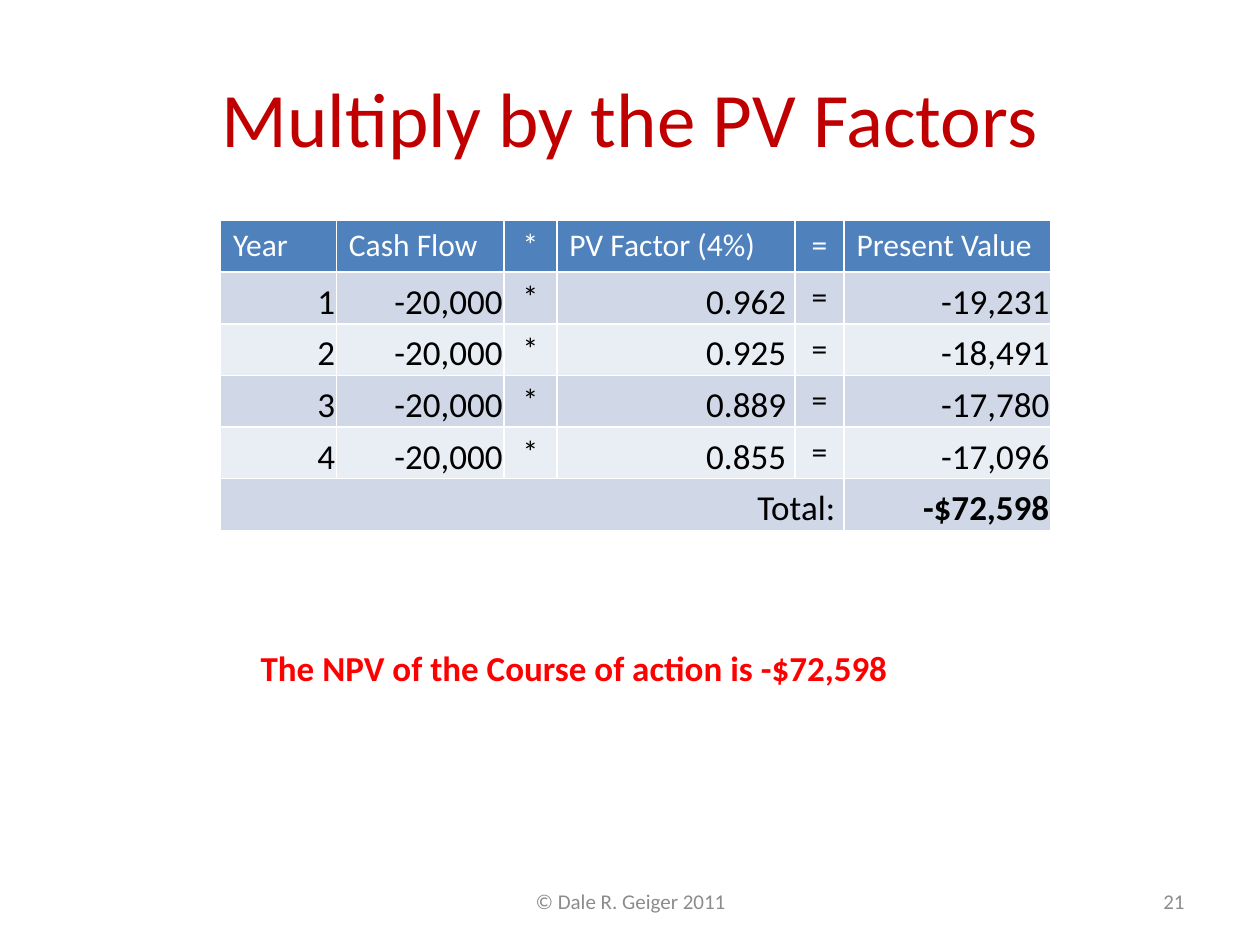
from dataclasses import dataclass

from pptx import Presentation
from pptx.dml.color import RGBColor
from pptx.enum import text as t
from pptx.util import Inches, Pt

FONT = "Calibri"
HEADER_FILL, DARK_BAND, LIGHT_BAND = "4F81BD", "D0D8E8", "E9EDF4"
LEFT, CENTER, RIGHT = t.PP_ALIGN.LEFT, t.PP_ALIGN.CENTER, t.PP_ALIGN.RIGHT
TOP, MIDDLE, BOTTOM = t.MSO_ANCHOR.TOP, t.MSO_ANCHOR.MIDDLE, t.MSO_ANCHOR.BOTTOM

COLUMN_WIDTHS = [0.92, 1.33, 0.42, 1.89, 0.39, 1.64]
ROW_HEIGHT = 0.41
HEADINGS = ["Year", "Cash Flow", "*", "PV Factor (4%)", "=", "Present Value"]
CASH_FLOW = "-20,000"
YEARS = [("0.962", "-19,231"), ("0.925", "-18,491"), ("0.889", "-17,780"), ("0.855", "-17,096")]
OPERATORS = ("*", "=")
FACTOR_COLUMN = 3
EDGE = 0.01
FACTOR_EDGE = 0.07


@dataclass
class Label:
    text: str
    left: float
    top: float
    width: float
    height: float
    size: int
    color: str
    align: t.PP_ALIGN
    anchor: t.MSO_ANCHOR = MIDDLE
    bold: bool = False
    wrap: bool = True


LABELS = [
    Label("The NPV of the Course of action is -$72,598", 1.97, 5.08, 5.3, 0.44,
          20, "FF0000", LEFT, TOP, bold=True, wrap=False),
    Label("© Dale R. Geiger 2011", 3.42, 6.95, 3.17, 0.4, 12, "8C8C8C", CENTER),
    Label("21", 7.17, 6.95, 2.33, 0.4, 12, "8C8C8C", RIGHT),
]


def rgb(color: str) -> RGBColor:
    return RGBColor.from_string(color)


def write(frame, text: str, size: int, color: str, align, bold: bool = False) -> None:
    frame.text = text
    para = frame.paragraphs[0]
    para.alignment = align
    font = para.runs[0].font
    font.name, font.size, font.bold = FONT, Pt(size), bold
    font.color.rgb = rgb(color)


def add_label(slide, label: Label) -> None:
    box = slide.shapes.add_textbox(Inches(label.left), Inches(label.top),
                                   Inches(label.width), Inches(label.height))
    frame = box.text_frame
    frame.word_wrap = label.wrap
    frame.vertical_anchor = label.anchor
    write(frame, label.text, label.size, label.color, label.align, label.bold)


def fill_cell(cell, color: str) -> None:
    cell.fill.solid()
    cell.fill.fore_color.rgb = rgb(color)


def write_number(cell, text: str, right_edge: float = EDGE, bold: bool = False) -> None:
    """Right-aligned text that sits close to the bottom of its cell."""
    cell.vertical_anchor = BOTTOM
    cell.margin_left = cell.margin_top = Inches(EDGE)
    cell.margin_right, cell.margin_bottom = Inches(right_edge), 0
    write(cell.text_frame, text, 20, "000000", RIGHT, bold)


def add_value_table(slide) -> None:
    row_count = len(YEARS) + 2
    table = slide.shapes.add_table(row_count, len(COLUMN_WIDTHS), Inches(1.75), Inches(1.75),
                                   Inches(sum(COLUMN_WIDTHS)),
                                   Inches(ROW_HEIGHT * row_count)).table
    for column, width in zip(table.columns, COLUMN_WIDTHS):
        column.width = Inches(width)
    for index, row in enumerate(table.rows):
        row.height = Inches(ROW_HEIGHT)
        band = DARK_BAND if index % 2 else LIGHT_BAND
        for cell in row.cells:
            fill_cell(cell, band if index else HEADER_FILL)

    for column, heading in enumerate(HEADINGS):
        write(table.cell(0, column).text_frame, heading, 18, "FFFFFF",
              CENTER if heading in OPERATORS else LEFT)

    for year, (factor, value) in enumerate(YEARS, start=1):
        for column, text in enumerate([str(year), CASH_FLOW, "*", factor, "=", value]):
            cell = table.cell(year, column)
            if text in OPERATORS:
                write(cell.text_frame, text, 18, "000000", CENTER)
            else:
                write_number(cell, text, FACTOR_EDGE if column == FACTOR_COLUMN else EDGE)

    total_row, last_column = row_count - 1, len(COLUMN_WIDTHS) - 1
    total = table.cell(total_row, 0)
    total.merge(table.cell(total_row, last_column - 1))
    write_number(total, "Total:", FACTOR_EDGE)
    write_number(table.cell(total_row, last_column), "-$72,598", bold=True)


def main() -> None:
    deck = Presentation()
    deck.slide_width, deck.slide_height = Inches(10), Inches(7.5)
    slide = deck.slides.add_slide(deck.slide_layouts.get_by_name("Title Only"))

    title = slide.shapes.title
    title.left, title.top = Inches(0.5), Inches(0.3)
    title.width, title.height = Inches(9), Inches(1.25)
    title.text_frame.vertical_anchor = MIDDLE
    write(title.text_frame, "Multiply by the PV Factors", 44, "C00000", CENTER)

    add_value_table(slide)
    for label in LABELS:
        add_label(slide, label)
    deck.save("out.pptx")


if __name__ == "__main__":
    main()
